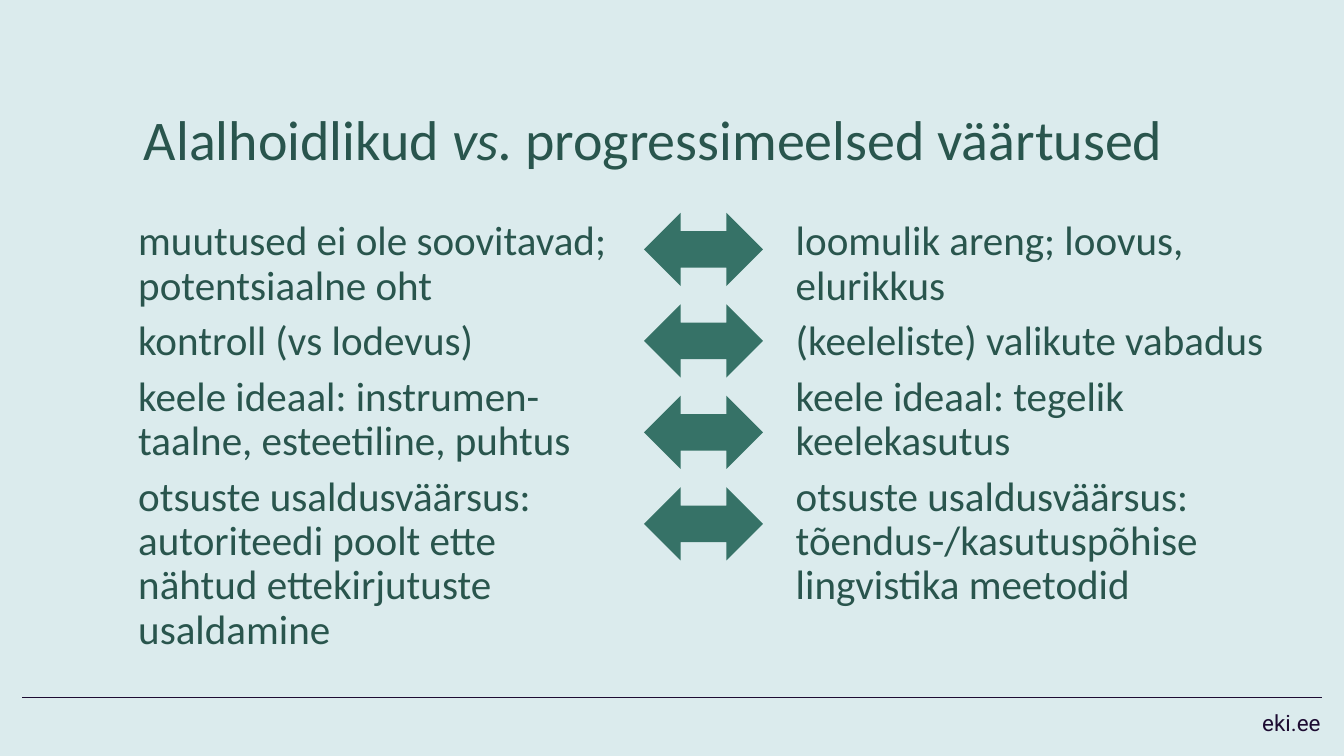
from lxml import etree
from pptx import Presentation
from pptx.dml.color import RGBColor
from pptx.enum.shapes import MSO_CONNECTOR, MSO_SHAPE
from pptx.enum.text import MSO_ANCHOR, MSO_AUTO_SIZE, PP_ALIGN
from pptx.oxml.ns import qn
from pptx.util import Pt

LEFT_VALUES = [
    "muutused ei ole soovitavad; potentsiaalne oht",
    "kontroll (vs lodevus)",
    "keele ideaal: instrumen-taalne, esteetiline, puhtus",
    "otsuste usaldusväärsus: autoriteedi poolt ette nähtud ettekirjutuste usaldamine",
]
RIGHT_VALUES = [
    "loomulik areng; loovus, elurikkus",
    "(keeleliste) valikute vabadus",
    "keele ideaal: tegelik keelekasutus",
    "otsuste usaldusväärsus: tõendus-/kasutuspõhise lingvistika meetodid",
]


def color(value):
    return RGBColor.from_string(value)


class SlideBuilder:
    BACKGROUND, TEXT, ARROW, INK = "DBEBED", "29554D", "367267", "1D0B32"
    FONT, FOOTER_FONT = "Calibri", "Roboto"

    def __init__(self, slide):
        self.slide = slide
        fill = slide.background.fill
        fill.solid()
        fill.fore_color.rgb = color(self.BACKGROUND)

    def format_paragraph(self, paragraph, size, font=FONT, text_color=TEXT,
                         align=PP_ALIGN.LEFT):
        paragraph.alignment = align
        paragraph.line_spacing = 0.9
        paragraph.font.size = Pt(size)
        paragraph.font.name = font
        paragraph.font.color.rgb = color(text_color)

    def add_title(self, left, top, width, height, parts):
        """Fill the title from (text, italic) parts."""
        title = self.slide.shapes.title
        title.left, title.top = Pt(left), Pt(top)
        title.width, title.height = Pt(width), Pt(height)
        frame = title.text_frame
        frame.auto_size = MSO_AUTO_SIZE.NONE
        frame.vertical_anchor = MSO_ANCHOR.BOTTOM
        paragraph = frame.paragraphs[0]
        for text, italic in parts:
            run = paragraph.add_run()
            run.text = text
            run.font.italic = italic
        self.format_paragraph(paragraph, 60)

    def add_text(self, left, top, width, height, lines, size, space_after=0, **style):
        box = self.slide.shapes.add_textbox(Pt(left), Pt(top), Pt(width), Pt(height))
        frame = box.text_frame
        frame.word_wrap = True
        frame.text = "\n".join(lines)
        for paragraph in frame.paragraphs:
            paragraph.space_after = Pt(space_after)
            self.format_paragraph(paragraph, size, **style)

    def add_double_arrow(self, left, top, width, height):
        arrow = self.slide.shapes.add_shape(
            MSO_SHAPE.LEFT_RIGHT_ARROW, Pt(left), Pt(top), Pt(width), Pt(height))
        arrow.shadow.inherit = False
        arrow.fill.solid()
        arrow.fill.fore_color.rgb = color(self.ARROW)
        arrow.line.fill.background()

    def add_rule(self, left, right, y):
        rule = self.slide.shapes.add_connector(
            MSO_CONNECTOR.STRAIGHT, Pt(left), Pt(y), Pt(right), Pt(y))
        rule.line.color.rgb = color(self.INK)
        rule.line.width = Pt(1)
        etree.SubElement(rule.element.spPr, qn("a:effectLst"))


def main():
    presentation = Presentation()
    presentation.slide_width, presentation.slide_height = Pt(1440), Pt(810)
    title_only = presentation.slide_layouts[5]
    builder = SlideBuilder(presentation.slides.add_slide(title_only))

    builder.add_text(1170, 759, 252, 42, ["eki.ee"], 24, font=builder.FOOTER_FONT,
                     text_color=builder.INK, align=PP_ALIGN.RIGHT)
    builder.add_rule(24, 1416, 747.5)
    builder.add_title(147, 35, 1170, 153.5, [
        ("Alalhoidlikud ", False),
        ("vs. ", True),
        ("progressimeelsed väärtused", False),
    ])
    for left, values in ((141, LEFT_VALUES), (845.5, RIGHT_VALUES)):
        builder.add_text(left, 232.5, 521.5, 479, values, 44, space_after=12)
    for row in range(len(LEFT_VALUES)):
        builder.add_double_arrow(690, 228 + 98 * row, 127.5, 78.5)

    presentation.save("out.pptx")


if __name__ == "__main__":
    main()
